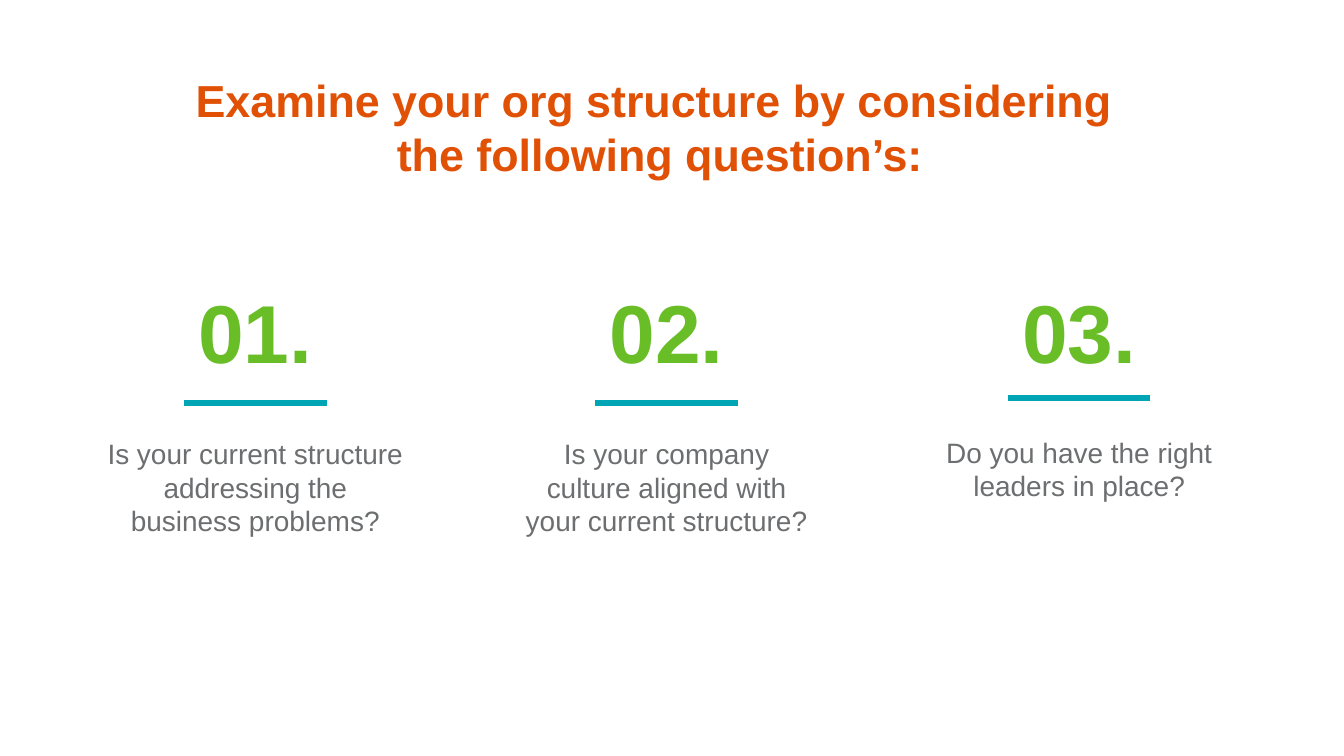
from dataclasses import dataclass

from lxml.etree import SubElement
from pptx import Presentation
from pptx.dml.color import RGBColor
from pptx.enum.shapes import MSO_CONNECTOR
from pptx.enum.text import PP_ALIGN
from pptx.oxml.ns import qn
from pptx.slide import Slide
from pptx.util import Inches, Pt


@dataclass(frozen=True)
class Style:
    size: float
    color: str
    bold: bool = False


@dataclass(frozen=True)
class Theme:
    font: str = "Arial"
    title: Style = Style(24, "E05106", True)
    number: Style = Style(44, "69BE28", True)
    body: Style = Style(15, "6C6E70")
    rule: str = "00A5B5"
    weight: float = 3


@dataclass(frozen=True)
class Column:
    center: float
    number: str
    question: str
    rule_y: float
    text_y: float
    height: float


THEME = Theme()
COLUMNS = [
    Column(1.9, "01.", "Is your current structure addressing the business problems?",
           3, 3.2, 0.86),
    Column(4.96, "02.", "Is your company culture aligned with your current structure?",
           3, 3.2, 0.86),
    Column(8.03, "03.", "Do you have the right leaders in place?",
           2.96, 3.19, 0.61),
]


def add_text(slide: Slide, text: str, center: float, top: float, width: float,
             height: float, style: Style, pad: tuple[float, float] = (0.1, 0.05),
             after: float = 0) -> None:
    box = slide.shapes.add_textbox(Inches(center - width / 2), Inches(top),
                                   Inches(width), Inches(height))
    frame = box.text_frame
    frame.word_wrap = True
    frame.margin_left = frame.margin_right = Inches(pad[0])
    frame.margin_top = frame.margin_bottom = Inches(pad[1])
    para = frame.paragraphs[0]
    para.text = text
    para.alignment = PP_ALIGN.CENTER
    para.space_after = Pt(after)
    para.font.name = THEME.font
    para.font.size = Pt(style.size)
    para.font.bold = style.bold
    para.font.color.rgb = RGBColor.from_string(style.color)


def add_rule(slide: Slide, center: float, top: float, width: float) -> None:
    left, right = center - width / 2, center + width / 2
    rule = slide.shapes.add_connector(MSO_CONNECTOR.STRAIGHT, Inches(left), Inches(top),
                                      Inches(right), Inches(top))
    rule.line.color.rgb = RGBColor.from_string(THEME.rule)
    rule.line.width = Pt(THEME.weight)
    SubElement(rule._element.spPr, qn("a:effectLst"))


def add_column(slide: Slide, col: Column) -> None:
    add_text(slide, col.question, col.center, col.text_y, 2.4, col.height,
             THEME.body, after=10)
    add_text(slide, col.number, col.center, 2.07, 1.24, 0.78,
             THEME.number, pad=(0.04, 0.02))
    add_rule(slide, col.center, col.rule_y, 1.06)


def main() -> None:
    # Widescreen page, 16:9
    deck = Presentation()
    deck.slide_width = Inches(10)
    deck.slide_height = Inches(10 * 9 / 16)
    slide = deck.slides.add_slide(deck.slide_layouts[6])

    # Title, broken over two lines
    add_text(slide, "Examine your org structure by considering \vthe following question’s:",
             4.91, 0.49, 8.73, 0.91, THEME.title)

    # Numbered questions
    for col in COLUMNS:
        add_column(slide, col)

    deck.save("out.pptx")


if __name__ == "__main__":
    main()
